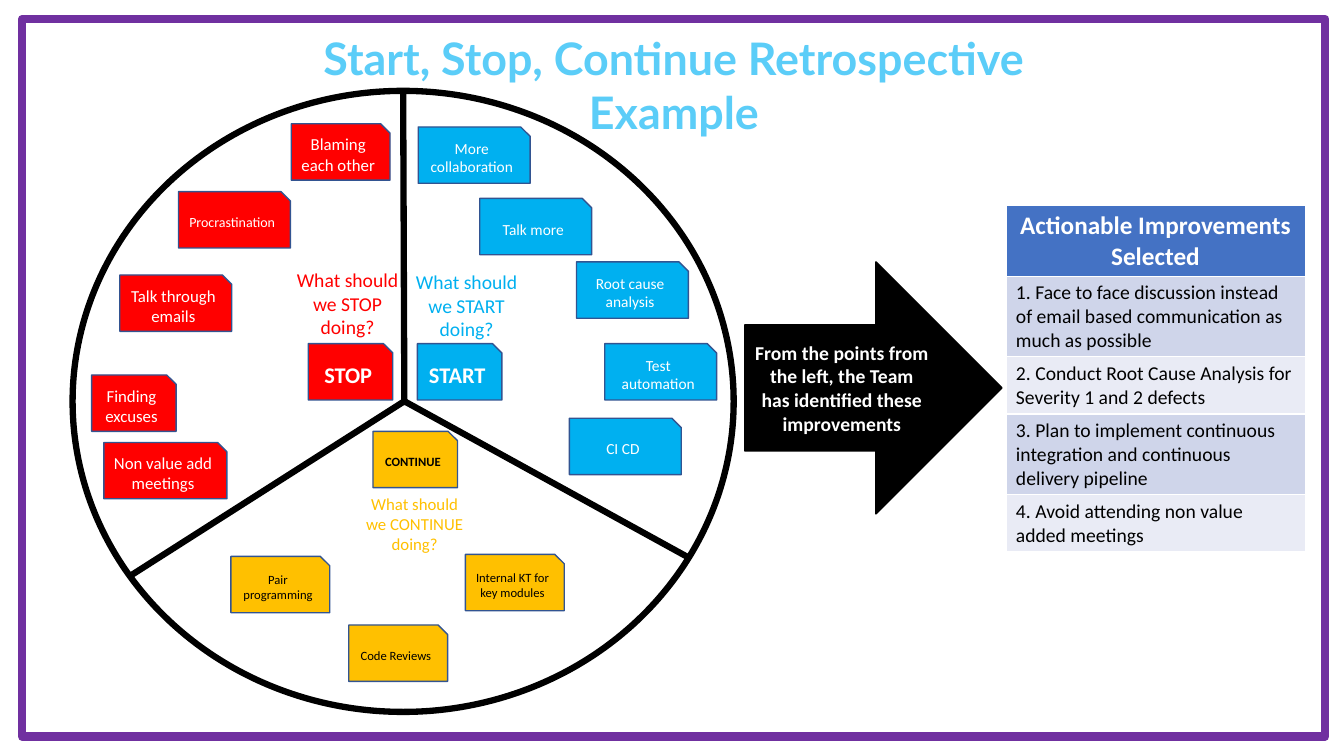
"""Builds a Start, Stop, Continue retrospective slide."""
from lxml import etree
from pptx import Presentation
from pptx.dml.color import RGBColor
from pptx.enum.shapes import MSO_CONNECTOR, MSO_SHAPE
from pptx.enum.text import MSO_ANCHOR, MSO_AUTO_SIZE, PP_ALIGN
from pptx.oxml.ns import qn
from pptx.util import Cm, Pt

RECTANGLE, OVAL = MSO_SHAPE.RECTANGLE, MSO_SHAPE.OVAL
STICKY, ARROW = MSO_SHAPE.SNIP_1_RECTANGLE, MSO_SHAPE.RIGHT_ARROW
STRAIGHT = MSO_CONNECTOR.STRAIGHT
MIDDLE, TOP = MSO_ANCHOR.MIDDLE, MSO_ANCHOR.TOP
CENTER, LEFT = PP_ALIGN.CENTER, PP_ALIGN.LEFT
GROW = MSO_AUTO_SIZE.SHAPE_TO_FIT_TEXT

COLORS = {
    "frame": "7030A0", "title": "5BCDF8", "black": "000000", "white": "FFFFFF",
    "edge": "325491", "stop": "FF0000", "start": "00B0F0", "continue": "FFC000",
    "header": "4472C4", "odd": "CFD5EA", "even": "E9EBF5",
}
TITLE = "Start, Stop, Continue Retrospective Example"
TITLE_BOX = (5.72, 0.66, 22.53, 1.63)
FRAME_BOX = (0.56, 0.48, 32.84, 18.08)
CIRCLE_BOX = (1.83, 2.29, 16.66, 15.65)
DIVIDERS = [
    (10.16, 2.29, 10.19, 10.21),
    (10.19, 10.11, 3.33, 14.48),
    (10.19, 10.11, 17.3, 14.02),
]
TAG_WIDTH, STICKY_HEIGHT = 2.13, 1.42
SECTORS = [
    {
        "color": "stop", "ink": "white",
        "tag": ("STOP", 7.77, 8.66, 16),
        "question": ("What should we STOP doing?", (7.06, 6.63, 3.4, 2.06), 14),
        "notes": [
            ("Blaming each other", 7.34, 3.12, 2.49, 12),
            ("Finding excuses", 2.31, 9.45, 2.13, 12),
            ("Procrastination", 4.5, 4.83, 2.82, 10),
            ("Non value add meetings", 2.62, 11.15, 3.1, 12),
            ("Talk through emails", 3.02, 6.93, 2.82, 12),
        ],
    },
    {
        "color": "start", "ink": "white",
        "tag": ("START", 10.52, 8.66, 16),
        "question": ("What should we START doing?", (10.16, 6.68, 3.2, 2.06), 14),
        "notes": [
            ("More collaboration", 10.54, 3.2, 2.82, 11),
            ("Talk more", 12.09, 5, 2.82, 11),
            ("Root cause analysis", 14.53, 6.6, 2.82, 11),
            ("Test automation", 15.24, 8.66, 2.82, 11),
            ("CI CD", 14.35, 10.54, 2.82, 11),
        ],
    },
    {
        "color": "continue", "ink": "black",
        "tag": ("CONTINUE", 9.4, 10.87, 9),
        "question": ("What should we CONTINUE doing?", (8.86, 12.32, 3.18, 1.8), 12),
        "notes": [
            ("Pair programming", 5.82, 14.02, 2.49, 9),
            ("Code Reviews", 8.79, 15.75, 2.49, 9),
            ("Internal KT for key modules", 11.73, 13.97, 2.49, 9),
        ],
    },
]
IMPROVEMENTS = [
    "Actionable Improvements Selected",
    "1. Face to face discussion instead of email based communication as much as possible",
    "2. Conduct Root Cause Analysis for Severity 1 and 2 defects",
    "3. Plan to implement continuous integration and continuous delivery pipeline",
    "4. Avoid attending non value added meetings",
]
TABLE_LEFT, TABLE_TOP, TABLE_WIDTH, ROW_HEIGHT = 25.35, 5.18, 7.54, 1.03
SUMMARY = "From the points from the left, the Team has identified these improvements"
SUMMARY_BOX = (18.77, 6.6, 6.48, 6.35)


def rgb(name):
    return RGBColor.from_string(COLORS[name])


def lengths(box):
    return [Cm(value) for value in box]


def write(frame, text, size, color, bold=False, align=CENTER, font="Calibri"):
    paragraph = frame.paragraphs[0]
    paragraph.alignment = align
    run = paragraph.add_run()
    run.text = text
    run.font.color.rgb = rgb(color)
    for name, value in {"name": font, "size": Pt(size), "bold": bold}.items():
        setattr(run.font, name, value)


def add_figure(slide, kind, box, fill, line, width):
    figure = slide.shapes.add_shape(kind, *lengths(box))
    figure.shadow.inherit = False
    if fill:
        figure.fill.solid()
        figure.fill.fore_color.rgb = rgb(fill)
    else:
        figure.fill.background()
    figure.line.color.rgb = rgb(line)
    figure.line.width = Pt(width)
    figure.text_frame.word_wrap = True
    figure.text_frame.vertical_anchor = MIDDLE
    return figure.text_frame


def add_label(slide, box, text, size, color, **style):
    frame = slide.shapes.add_textbox(*lengths(box)).text_frame
    for name, value in {"word_wrap": True, "auto_size": GROW, "vertical_anchor": TOP}.items():
        setattr(frame, name, value)
    write(frame, text, size, color, **style)


def add_divider(slide, ends):
    divider = slide.shapes.add_connector(STRAIGHT, *lengths(ends))
    divider.line.color.rgb = rgb("black")
    divider.line.width = Pt(4.5)
    etree.SubElement(divider.element.spPr, qn("a:effectLst"))


def add_sector(slide, sector):
    color, ink = sector["color"], sector["ink"]
    tag, left, top, size = sector["tag"]
    stickies = [(tag, left, top, TAG_WIDTH, size, True)]
    stickies += [(*note, False) for note in sector["notes"]]
    for text, left, top, width, size, bold in stickies:
        box = (left, top, width, STICKY_HEIGHT)
        frame = add_figure(slide, STICKY, box, color, "edge", 1)
        write(frame, text, size, ink, bold)
    question, box, size = sector["question"]
    add_label(slide, box, question, size, color)


def add_improvements(slide):
    count = len(IMPROVEMENTS)
    box = (TABLE_LEFT, TABLE_TOP, TABLE_WIDTH, ROW_HEIGHT * count)
    table = slide.shapes.add_table(count, 1, *lengths(box)).table
    for index, text in enumerate(IMPROVEMENTS):
        cell = table.cell(index, 0)
        cell.fill.solid()
        if index == 0:
            cell.fill.fore_color.rgb = rgb("header")
            write(cell.text_frame, text, 18, "white", bold=True)
        else:
            cell.fill.fore_color.rgb = rgb("odd" if index % 2 else "even")
            write(cell.text_frame, text, 14, "black", align=LEFT)


def main():
    deck = Presentation()
    deck.slide_width, deck.slide_height = Cm(33.87), Cm(19.05)
    slide = deck.slides.add_slide(deck.slide_layouts[6])
    add_figure(slide, RECTANGLE, FRAME_BOX, None, "frame", 6)
    add_label(slide, TITLE_BOX, TITLE, 32, "title", bold=True, font="Lato")
    add_figure(slide, OVAL, CIRCLE_BOX, None, "black", 4.5)
    for ends in DIVIDERS:
        add_divider(slide, ends)
    for sector in SECTORS:
        add_sector(slide, sector)
    add_improvements(slide)
    summary = add_figure(slide, ARROW, SUMMARY_BOX, "black", "black", 1)
    write(summary, SUMMARY, 14, "white", bold=True)
    deck.save("out.pptx")


if __name__ == "__main__":
    main()
